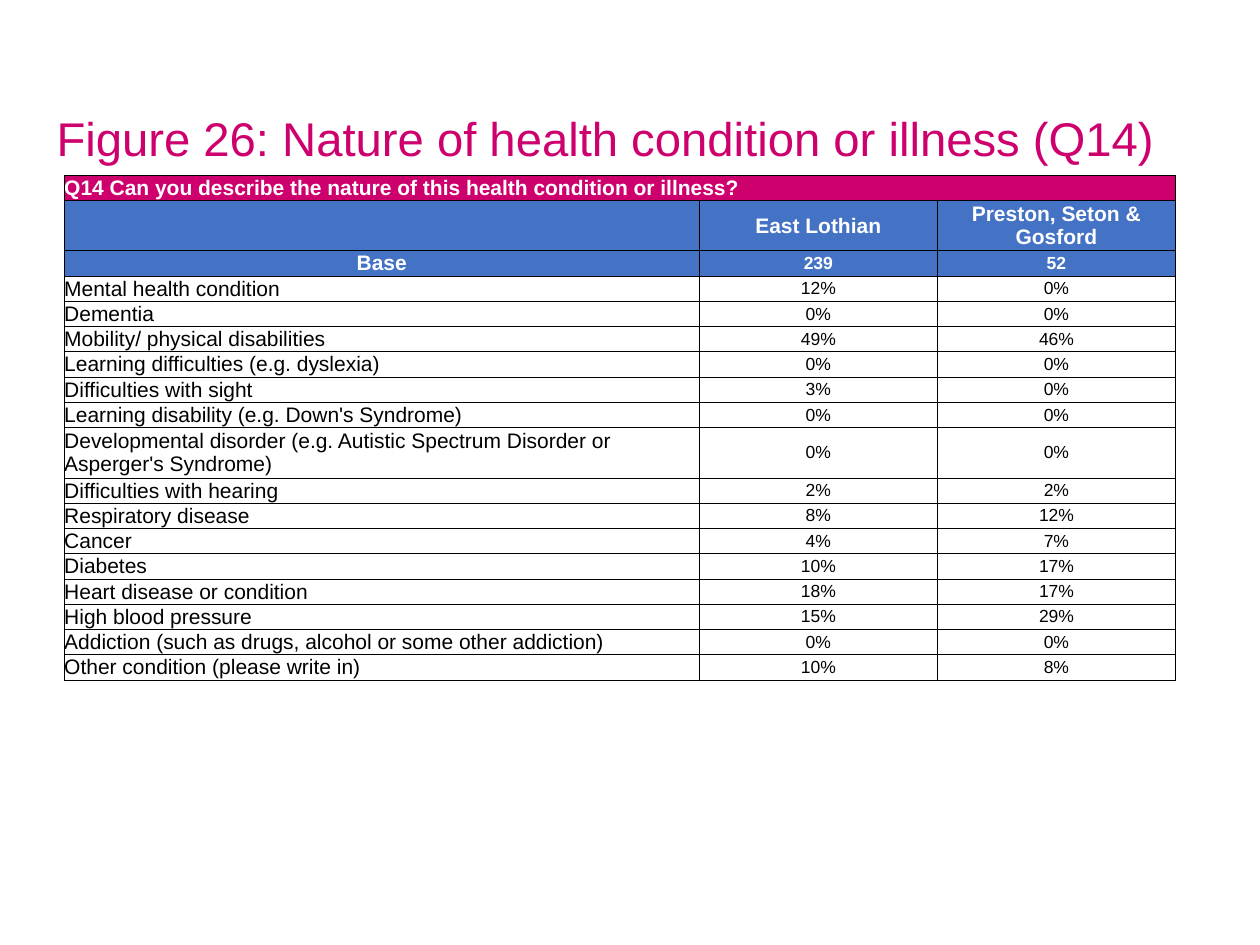
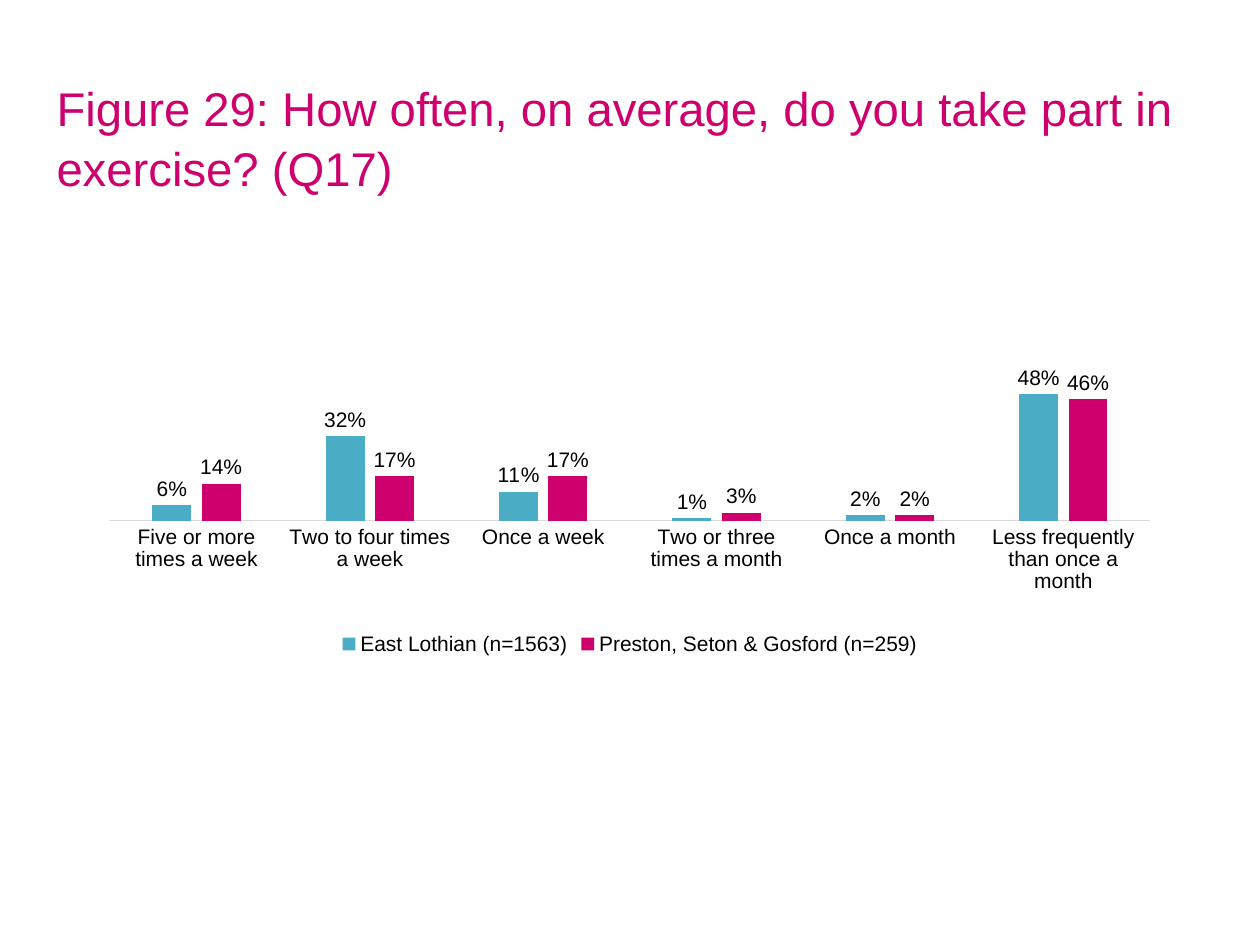
from lxml import etree
from pptx import Presentation
from pptx.chart.data import CategoryChartData
from pptx.dml.color import RGBColor
from pptx.enum.chart import (XL_CHART_TYPE as ChartType, XL_LABEL_POSITION as LabelPos,
                             XL_LEGEND_POSITION as LegendPos, XL_TICK_MARK as TickMark)
from pptx.enum.text import MSO_ANCHOR as Anchor, PP_ALIGN as Align
from pptx.oxml import parse_xml
from pptx.oxml.ns import nsdecls, qn
from pptx.util import Inches, Pt

FONT = "Arial"
PINK, BLUE, TEAL = "CD006E", "4472C4", "4BACC6"
BLACK, WHITE, GREY = "000000", "FFFFFF", "D9D9D9"
TITLE_BOX = (0.35, 0.3, 9.65, 1.56)
LINE_HEIGHT = 0.19

QUESTION = "Q14 Can you describe the nature of this health condition or illness?"
AREAS = ("", "East Lothian", "Preston, Seton & Gosford")
BASE = ("Base", "239", "52")
CONDITIONS = [
    ("Mental health condition", "12%", "0%"),
    ("Dementia", "0%", "0%"),
    ("Mobility/ physical disabilities", "49%", "46%"),
    ("Learning difficulties (e.g. dyslexia)", "0%", "0%"),
    ("Difficulties with sight", "3%", "0%"),
    ("Learning disability (e.g. Down's Syndrome)", "0%", "0%"),
    ("Developmental disorder (e.g. Autistic Spectrum Disorder or Asperger's Syndrome)",
     "0%", "0%"),
    ("Difficulties with hearing", "2%", "2%"),
    ("Respiratory disease", "8%", "12%"),
    ("Cancer", "4%", "7%"),
    ("Diabetes", "10%", "17%"),
    ("Heart disease or condition", "18%", "17%"),
    ("High blood pressure", "15%", "29%"),
    ("Addiction (such as drugs, alcohol or some other addiction)", "0%", "0%"),
    ("Other condition (please write in)", "10%", "8%"),
]

FREQUENCIES = ["Five or more times a week", "Two to four times a week", "Once a week",
               "Two or three times a month", "Once a month",
               "Less frequently than once a month"]
EXERCISE = [
    ("East Lothian (n=1563)", TEAL, (0.06, 0.32, 0.11, 0.01, 0.02, 0.48)),
    ("Preston, Seton & Gosford (n=259)", PINK, (0.14, 0.17, 0.17, 0.03, 0.02, 0.46)),
]


def rgb(value):
    return RGBColor.from_string(value)


def style_font(font, size, color=BLACK, bold=False):
    font.name, font.size, font.bold = FONT, Pt(size), bold
    font.color.rgb = rgb(color)


def add_title(slide, text, box=TITLE_BOX):
    frame = slide.shapes.add_textbox(*map(Inches, box)).text_frame
    frame.word_wrap = True
    frame.vertical_anchor = Anchor.MIDDLE
    heading = frame.paragraphs[0]
    heading.text = text
    heading.line_spacing = 1.05
    style_font(heading.font, 27, PINK)


def add_borders(cell):
    """Thin black line on all four sides, placed ahead of the fill."""
    properties = cell._tc.get_or_add_tcPr()
    for position, side in enumerate(("lnL", "lnR", "lnT", "lnB")):
        properties.insert(position, parse_xml(
            f'<a:{side} {nsdecls("a")} w="6350"><a:solidFill>'
            f'<a:srgbClr val="{BLACK}"/></a:solidFill></a:{side}>'))


def fill_cell(cell, text, size, fill, color, bold, align):
    cell.fill.solid()
    cell.fill.fore_color.rgb = rgb(fill)
    add_borders(cell)
    cell.vertical_anchor = Anchor.MIDDLE
    cell.margin_left = cell.margin_right = cell.margin_top = cell.margin_bottom = 0
    entry = cell.text_frame.paragraphs[0]
    entry.text = text
    entry.alignment = align
    style_font(entry.font, size, color, bold)


def add_condition_table(slide, box):
    rows = [(QUESTION, "", ""), AREAS, BASE, *CONDITIONS]
    left, top, width, height = map(Inches, box)
    table = slide.shapes.add_table(len(rows), 3, left, top, width, height).table
    for column, column_width in zip(table.columns, (5.04, 1.89, 1.89)):
        column.width = Inches(column_width)

    for r, row in enumerate(rows):
        two_lines = row is AREAS or len(row[0]) > 70
        table.rows[r].height = Inches(LINE_HEIGHT * (2 if two_lines and r else 1))
        header = r < 3
        fill = PINK if r == 0 else BLUE if header else WHITE
        for c, text in enumerate(row):
            label = c == 0 or r < 2
            left_aligned = c == 0 and r not in (1, 2)
            fill_cell(table.cell(r, c), text, 12 if label else 10, fill,
                      WHITE if header else BLACK, header,
                      Align.LEFT if left_aligned else Align.CENTER)
    table.cell(0, 0).merge(table.cell(0, 2))


def set_plot_layout(chart, x, y, w, h):
    """Fix the inner plot area as fractions of the chart."""
    plot_area = chart._chartSpace.chart.plotArea
    for old in plot_area.findall(qn("c:layout")):
        plot_area.remove(old)
    layout = etree.Element(qn("c:layout"))
    manual = etree.SubElement(layout, qn("c:manualLayout"))
    settings = dict(layoutTarget="inner", xMode="edge", yMode="edge", x=x, y=y, w=w, h=h)
    for tag, value in settings.items():
        etree.SubElement(manual, qn(f"c:{tag}")).set("val", str(value))
    plot_area.insert(0, layout)


def add_exercise_chart(slide, box):
    data = CategoryChartData(number_format="0%")
    data.categories = FREQUENCIES
    for name, _, shares in EXERCISE:
        data.add_series(name, shares)
    chart = slide.shapes.add_chart(ChartType.COLUMN_CLUSTERED, *map(Inches, box), data).chart
    style_font(chart.font, 12)
    chart.has_title = False
    set_plot_layout(chart, 0.02, 0.21, 0.96, 0.42)

    # Columns and their labels
    plot = chart.plots[0]
    plot.gap_width, plot.overlap = 219, -27
    plot.vary_by_categories = False
    for series, (_, color, _) in zip(plot.series, EXERCISE):
        series.format.fill.solid()
        series.format.fill.fore_color.rgb = rgb(color)
        labels = series.data_labels
        labels.show_value = True
        labels.position = LabelPos.OUTSIDE_END
        labels.number_format, labels.number_format_is_linked = "0%", False
        style_font(labels.font, 12)

    # Axes
    frequency_axis, share_axis = chart.category_axis, chart.value_axis
    frequency_axis.major_tick_mark = TickMark.NONE
    frequency_axis.format.line.color.rgb = rgb(GREY)
    frequency_axis.format.line.width = Pt(0.75)
    style_font(frequency_axis.tick_labels.font, 12)
    share_axis.minimum_scale, share_axis.maximum_scale = 0, 0.6
    share_axis.has_major_gridlines = False
    share_axis.visible = False

    # Legend
    chart.has_legend = True
    chart.legend.position = LegendPos.BOTTOM
    chart.legend.include_in_layout = False
    style_font(chart.legend.font, 12)


def main():
    deck = Presentation()
    deck.slide_width, deck.slide_height = Inches(10), Inches(7.5)
    figures = [
        ("Figure 26: Nature of health condition or illness (Q14)",
         add_condition_table, (0.51, 1.39, 8.82, 3.8)),
        ("Figure 29: How often, on average, do you take part in exercise? (Q17)",
         add_exercise_chart, (0.7, 2.25, 8.6, 2.99)),
    ]
    for title, add_figure, box in figures:
        slide = deck.slides.add_slide(deck.slide_layouts[6])
        add_title(slide, title)
        add_figure(slide, box)
    deck.save("out.pptx")


if __name__ == "__main__":
    main()
